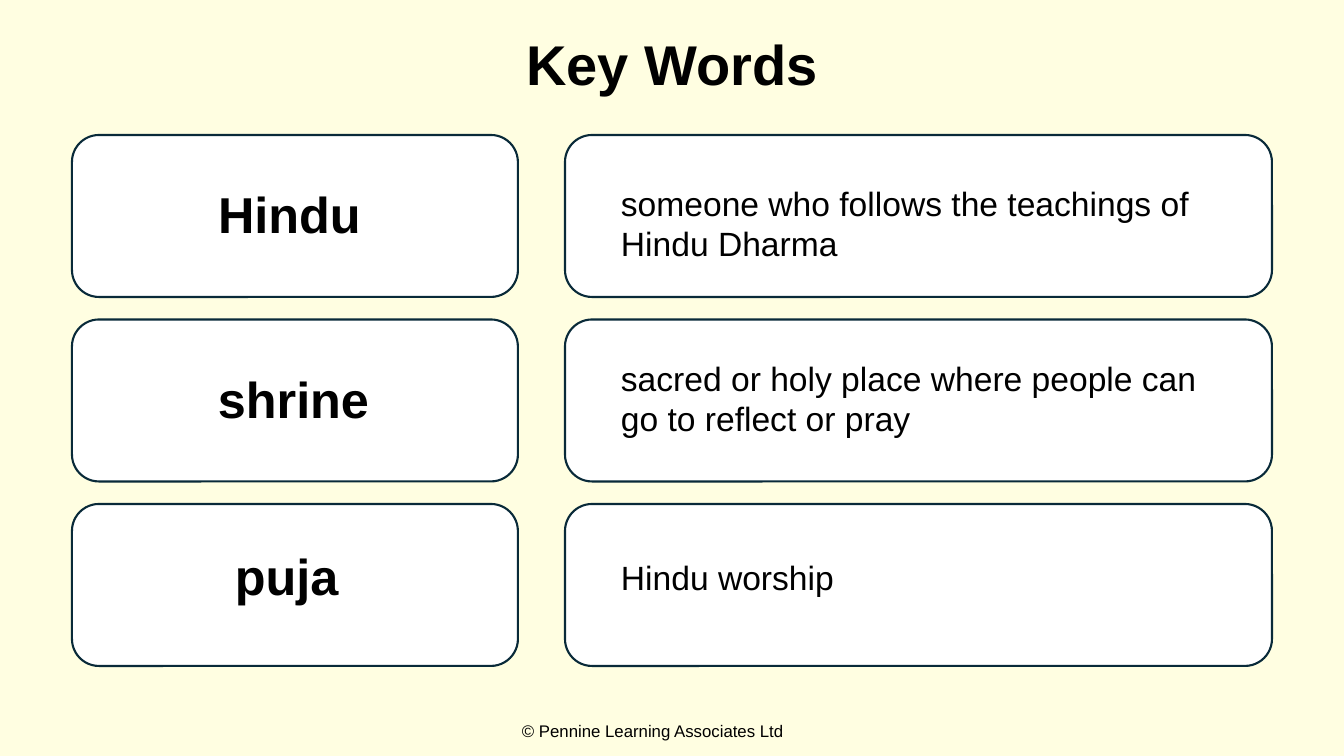
import pptx
import pptx.util
import pptx.dml.color
import pptx.enum.shapes
import pptx.enum.text

RGBColor = pptx.dml.color.RGBColor
CREAM = RGBColor(0xFF, 0xFE, 0xE1)
WHITE = RGBColor(0xFF, 0xFF, 0xFF)
NAVY = RGBColor(0x09, 0x2A, 0x39)
BLACK = RGBColor(0, 0, 0)
ALIGN = pptx.enum.text.PP_ALIGN
LEFT, CENTER = ALIGN.LEFT, ALIGN.CENTER

# Content: text, box (left, top, width, height) in px, alignment
TITLE = "Key Words"
FOOTER = ("© Pennine Learning Associates Ltd", (512, 716, 321, 30))
WORDS = [
    ("Hindu", (61, 178, 457, 72), CENTER),
    ("shrine", (208, 363, 325, 72), LEFT),
    ("puja", (225, 540, 307, 72), LEFT),
]
MEANINGS = [
    ("someone who follows the teachings of Hindu Dharma", (611, 178, 642, 92)),
    ("sacred or holy place where people can go to reflect or pray",
     (611, 353, 603, 92)),
    ("Hindu worship", (611, 552, 707, 50)),
]

# Card grid in px
COLUMNS = [(72, 446), (565, 707)]
TOP, HIGH, LAST = 135, 162, 504
STEP = (LAST - TOP) / (len(WORDS) - 1)

SCALE = 914400 / 100.8


def emu(*sizes):
    return [pptx.util.Emu(round(size * SCALE)) for size in sizes]


def write(frame, text, size, bold=False, align=LEFT):
    frame.word_wrap = True
    para = frame.paragraphs[0]
    para.alignment = align
    run = para.add_run()
    run.text = text
    run.font.name = "Arial"
    run.font.size = pptx.util.Pt(size)
    run.font.bold = bold
    run.font.color.rgb = BLACK
    return para


def label(slide, text, box, size, bold=False, align=LEFT):
    frame = slide.shapes.add_textbox(*emu(*box)).text_frame
    write(frame, text, size, bold, align)
    frame.auto_size = pptx.enum.text.MSO_AUTO_SIZE.SHAPE_TO_FIT_TEXT


def card(slide, box):
    shape = slide.shapes.add_shape(
        pptx.enum.shapes.MSO_SHAPE.ROUNDED_RECTANGLE, *emu(*box))
    shape.shadow.inherit = False
    shape.fill.solid()
    shape.fill.fore_color.rgb = WHITE
    shape.line.color.rgb = NAVY
    shape.line.width = pptx.util.Pt(1.5)


def main():
    deck = pptx.Presentation()
    deck.slide_width, deck.slide_height = emu(1344, 756)
    slide = deck.slides.add_slide(deck.slide_layouts[5])
    slide.background.fill.solid()
    slide.background.fill.fore_color.rgb = CREAM

    # Footer
    label(slide, *FOOTER, 12)

    # Title
    title = slide.shapes.title
    title.left, title.top, title.width, title.height = emu(0, 0, 1344, 135)
    title.text_frame.vertical_anchor = pptx.enum.text.MSO_ANCHOR.MIDDLE
    write(title.text_frame, TITLE, 40, True, CENTER).line_spacing = 0.9

    # Cards
    for left, width in COLUMNS:
        for row in range(len(WORDS)):
            card(slide, (left, TOP + row * STEP, width, HIGH))

    # Words and meanings
    for text, box, align in WORDS:
        label(slide, text, box, 36, True, align)
    for text, box in MEANINGS:
        label(slide, text, box, 24)

    deck.save("out.pptx")


if __name__ == "__main__":
    main()
